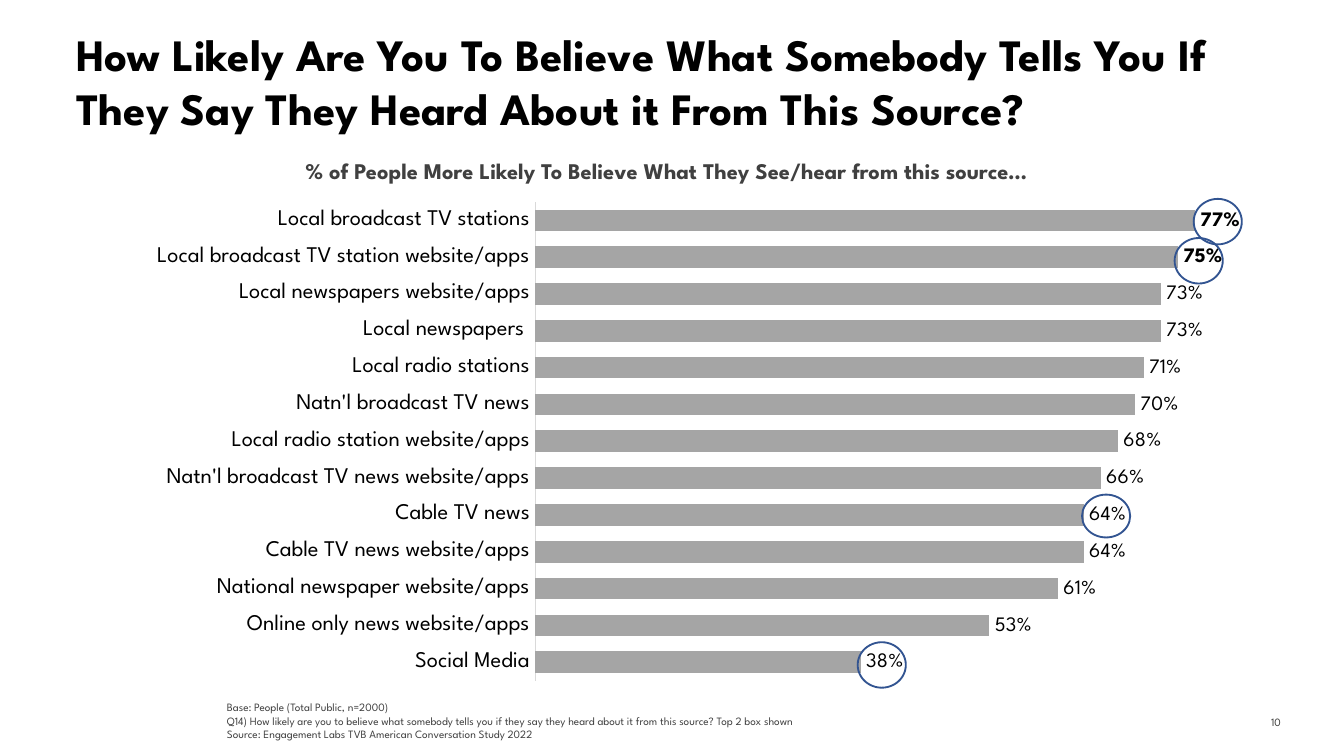
from lxml.etree import SubElement
from pptx import Presentation
from pptx.chart.data import CategoryChartData
from pptx.dml.color import RGBColor
from pptx.enum.chart import XL_CHART_TYPE, XL_LABEL_POSITION, XL_TICK_MARK
from pptx.enum.shapes import MSO_SHAPE
from pptx.enum.text import MSO_ANCHOR, MSO_AUTO_SIZE, PP_ALIGN
from pptx.oxml.ns import qn
from pptx.util import Cm, Pt

FONT = "League Spartan"
BLACK = RGBColor(0x00, 0x00, 0x00)
DARK_GRAY = RGBColor(0x40, 0x40, 0x40)
NUMBER_GRAY = RGBColor(0x3C, 0x3C, 0x3A)
BAR_GRAY = RGBColor(0xA5, 0xA5, 0xA5)
AXIS_GRAY = RGBColor(0xD9, 0xD9, 0xD9)
RING_BLUE = RGBColor(0x32, 0x54, 0x91)

BELIEF_BY_SOURCE = {
    "Local broadcast TV stations": 0.77,
    "Local broadcast TV station website/apps": 0.75,
    "Local newspapers website/apps": 0.73,
    "Local newspapers ": 0.73,
    "Local radio stations": 0.71,
    "Natn'l broadcast TV news": 0.70,
    "Local radio station website/apps": 0.68,
    "Natn'l broadcast TV news website/apps": 0.66,
    "Cable TV news": 0.64,
    "Cable TV news website/apps": 0.64,
    "National newspaper website/apps": 0.61,
    "Online only news website/apps": 0.53,
    "Social Media": 0.38,
}
FOOTNOTES = [
    "Base: People (Total Public, n=2000)",
    "Q14) How likely are you to believe what somebody tells you if they say "
    "they heard about it from this source? Top 2 box shown",
    "Source: Engagement Labs TVB American Conversation Study 2022",
]
RINGS = [
    (22.56, 3.76, 0.86),
    (22.2, 4.5, 0.86),
    (16.21, 12.14, 0.86),
    (20.45, 9.35, 0.81),
]


def style_font(font, size, color=BLACK, bold=False):
    """Set typeface, size, colour and weight."""
    font.name = FONT
    font.size = Pt(size)
    font.color.rgb = color
    font.bold = bold


def add_text(page, lines, left, top, width, height, *, size, color=BLACK, bold=False,
             align=PP_ALIGN.LEFT, anchor=MSO_ANCHOR.TOP, wrap=True, grow=False):
    """Add a text box with one paragraph per line."""
    box = page.shapes.add_textbox(Cm(left), Cm(top), Cm(width), Cm(height))
    frame = box.text_frame
    frame.word_wrap = wrap
    frame.vertical_anchor = anchor
    frame.auto_size = MSO_AUTO_SIZE.SHAPE_TO_FIT_TEXT if grow else MSO_AUTO_SIZE.NONE
    frame.text = "\n".join(lines)
    for para in frame.paragraphs:
        para.alignment = align
        for span in para.runs:
            style_font(span.font, size, color, bold)


def set_plot_layout(chart, **fractions):
    """Fix the inner plot area as fractions of the chart."""
    plot_area = chart.plots[0]._element.getparent()
    layout = plot_area.find(qn("c:layout"))
    if layout is None:
        layout = SubElement(plot_area, qn("c:layout"))
        plot_area.insert(0, layout)
    manual = SubElement(layout, qn("c:manualLayout"))
    settings = {"layoutTarget": "inner", "xMode": "edge", "yMode": "edge", **fractions}
    for name, value in settings.items():
        SubElement(manual, qn(f"c:{name}")).set("val", str(value))


def style_axes(chart):
    """Show the sources top down and hide the value scale."""
    sources = chart.category_axis
    sources.reverse_order = True
    sources.major_tick_mark = XL_TICK_MARK.NONE
    sources.minor_tick_mark = XL_TICK_MARK.NONE
    sources.format.line.color.rgb = AXIS_GRAY
    sources.format.line.width = Pt(0.75)
    style_font(sources.tick_labels.font, 12)
    scale = chart.value_axis
    scale.minimum_scale = 0
    scale.maximum_scale = 0.9
    scale.has_major_gridlines = False
    scale.tick_labels.number_format = "0%"
    scale.tick_labels.number_format_is_linked = False
    scale.visible = False


def add_belief_chart(page):
    """Add the bar chart with its two leading values in bold."""
    data = CategoryChartData(number_format="0%")
    data.categories = list(BELIEF_BY_SOURCE)
    data.add_series("Series 1", list(BELIEF_BY_SOURCE.values()))
    chart = page.shapes.add_chart(XL_CHART_TYPE.BAR_CLUSTERED, Cm(2.49), Cm(3.43),
                                  Cm(22.43), Cm(9.73), data).chart
    chart.has_legend = False
    chart.has_title = False
    style_font(chart.font, 10)
    set_plot_layout(chart, x=0.34, y=0.04, w=0.65, h=0.93)
    style_axes(chart)
    plot = chart.plots[0]
    plot.gap_width = 70
    plot.vary_by_categories = False
    series = plot.series[0]
    series.format.fill.solid()
    series.format.fill.fore_color.rgb = BAR_GRAY
    labels = series.data_labels
    labels.show_value = True
    labels.number_format = "0%"
    labels.number_format_is_linked = False
    labels.position = XL_LABEL_POSITION.OUTSIDE_END
    style_font(labels.font, 11)
    for index in range(2):
        label = series.points[index].data_label
        style_font(label.font, 11, bold=True)
        label.position = XL_LABEL_POSITION.OUTSIDE_END


def add_ring(page, left, top, height):
    """Add an unfilled ellipse around a value."""
    ring = page.shapes.add_shape(MSO_SHAPE.OVAL, Cm(left), Cm(top), Cm(0.91), Cm(height))
    ring.shadow.inherit = False
    ring.fill.background()
    ring.line.color.rgb = RING_BLUE
    ring.line.width = Pt(1)


def main():
    """Build and save the slide."""
    deck = Presentation()
    deck.slide_width = Cm(25.4)
    deck.slide_height = Cm(14.29)
    page = deck.slides.add_slide(deck.slide_layouts[6])
    add_text(page, ["10"], 22.96, 13.26, 1.5, 0.76, size=6, color=NUMBER_GRAY,
             align=PP_ALIGN.RIGHT, anchor=MSO_ANCHOR.MIDDLE)
    add_belief_chart(page)
    add_text(page, ["How Likely Are You To Believe What Somebody Tells You If "
                    "They Say They Heard About it From This Source?"],
             1.19, 0.38, 23.39, 2.29, size=24, bold=True)
    add_text(page, FOOTNOTES, 4.04, 13.11, 20.57, 1.02, size=6, color=DARK_GRAY,
             anchor=MSO_ANCHOR.BOTTOM, grow=True)
    add_text(page, ["% of People More Likely To Believe What They See/hear from this source…"],
             4.75, 2.84, 15.7, 1.27, size=12, color=DARK_GRAY, bold=True,
             align=PP_ALIGN.CENTER, wrap=False, grow=True)
    for left, top, height in RINGS:
        add_ring(page, left, top, height)
    deck.save("out.pptx")


if __name__ == "__main__":
    main()
